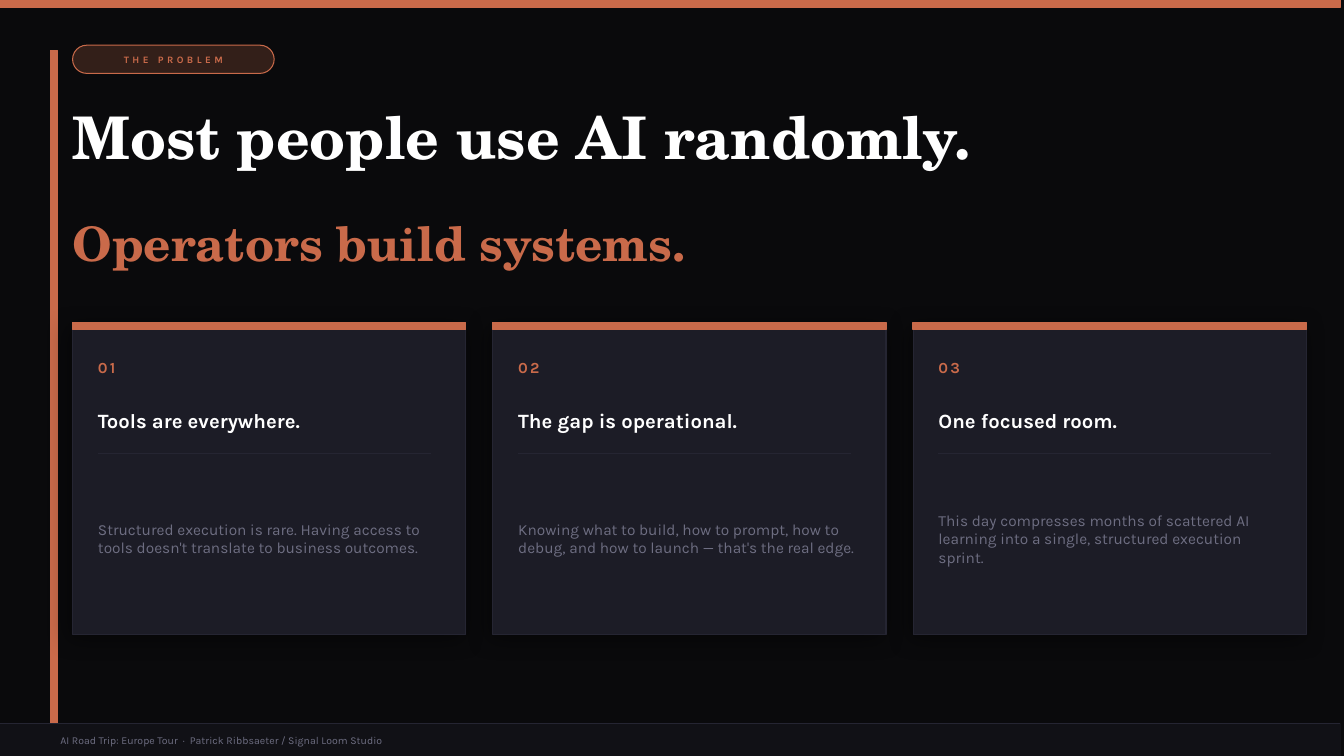
from lxml.etree import SubElement
from pptx import Presentation
from pptx.dml.color import RGBColor
from pptx.enum.shapes import MSO_CONNECTOR, MSO_SHAPE
from pptx.enum.text import MSO_ANCHOR, MSO_AUTO_SIZE, PP_ALIGN
from pptx.oxml import parse_xml
from pptx.oxml.ns import nsdecls, qn
from pptx.util import Cm, Pt

ACCENT, WHITE, GREY = "C96A4A", "FFFFFF", "6E6E82"
BACK, CARD, BAND, RULE = "0A0A0C", "1C1C26", "111116", "252532"
SANS, SERIF = "Karla", "TeX Gyre Schola"
LEFT, BAR, WIDTH = 1.83, 0.18, 33.78
CARD_TOP, CARD_W, CARD_H, CARD_PITCH = 8.13, 9.91, 7.87, 10.59
CARDS = [
    ("Tools are everywhere.",
     "Structured execution is rare. Having access to tools doesn't translate to business outcomes."),
    ("The gap is operational.",
     "Knowing what to build, how to prompt, how to debug, and how to launch — that's the real edge."),
    ("One focused room.",
     "This day compresses months of scattered AI learning into a single, structured execution sprint."),
]


def rgb(color):
    """Turn a hex string into a colour."""
    return RGBColor.from_string(color)


def place(sp, x, y, w, h):
    """Move and size a shape, in centimetres."""
    sp.left, sp.top, sp.width, sp.height = Cm(x), Cm(y), Cm(w), Cm(h)


def add_box(s, x, y, w, h, fill, line=None, weight=1, kind=MSO_SHAPE.RECTANGLE):
    """Add a filled shape without a shadow."""
    sp = s.shapes.add_shape(kind, Cm(x), Cm(y), Cm(w), Cm(h))
    sp.shadow.inherit = False
    sp.fill.solid()
    sp.fill.fore_color.rgb = rgb(fill)
    sp.line.color.rgb = rgb(line or fill)
    sp.line.width = Pt(weight)
    return sp


def add_rule(s, x, y, w, weight):
    """Add a thin horizontal line."""
    line = s.shapes.add_connector(MSO_CONNECTOR.STRAIGHT, Cm(x), Cm(y), Cm(x + w), Cm(y))
    line.line.color.rgb = rgb(RULE)
    line.line.width = Pt(weight)
    SubElement(line._element.spPr, qn("a:effectLst"))


def set_text(sp, text, size, color, font=SANS, bold=False, spacing=0, align=PP_ALIGN.LEFT):
    """Write one formatted paragraph, vertically centred and without insets."""
    tf = sp.text_frame
    tf.word_wrap = True
    tf.auto_size = MSO_AUTO_SIZE.NONE
    tf.vertical_anchor = MSO_ANCHOR.MIDDLE
    tf.margin_left = tf.margin_right = tf.margin_top = tf.margin_bottom = 0
    p = tf.paragraphs[0]
    p.text = text
    p.alignment = align
    p.font.name, p.font.size, p.font.bold = font, Pt(size), bold
    p.font.color.rgb = rgb(color)
    if spacing:
        p._p.pPr.get_or_add_defRPr().set("spc", str(int(spacing * 100)))


def add_text(s, x, y, w, h, text, size, color, **style):
    """Add a text box."""
    sp = s.shapes.add_textbox(Cm(x), Cm(y), Cm(w), Cm(h))
    set_text(sp, text, size, color, **style)


def add_header(s, x, y, w):
    """Add the tag, the title and the second headline."""
    tag = add_box(s, x, y, 5.08, 0.71, ACCENT, weight=0.75, kind=MSO_SHAPE.ROUNDED_RECTANGLE)
    tag.adjustments[0] = 0.5
    tint = tag._element.spPr.find(qn("a:solidFill")).find(qn("a:srgbClr"))
    SubElement(tint, qn("a:alpha")).set("val", "22000")
    set_text(tag, "THE PROBLEM", 7, ACCENT, bold=True, spacing=2.5, align=PP_ALIGN.CENTER)
    place(s.shapes.title, x, y + 1.15, w, 2.29)
    set_text(s.shapes.title, "Most people use AI randomly.", 42, WHITE, font=SERIF, bold=True)
    add_text(s, x, y + 3.99, w, 1.98, "Operators build systems.", 34, ACCENT, font=SERIF, bold=True)


def add_card(s, x, y, w, h, number, heading, body):
    """Add one numbered card with a soft shadow."""
    card = add_box(s, x, y, w, h, CARD, RULE, 0.75)
    card._element.spPr.find(qn("a:effectLst")).append(parse_xml(
        f'<a:outerShdw {nsdecls("a")} blurRad="{Pt(16)}" dist="{Pt(4)}" dir="8100000" '
        'algn="bl" rotWithShape="0"><a:srgbClr val="000000"><a:alpha val="45000"/>'
        '</a:srgbClr></a:outerShdw>'))
    add_box(s, x, y, w, BAR, ACCENT)
    inner, text_w = x + 0.64, w - 1.27
    add_text(s, inner, y + 0.64, 1.78, 0.97, f"{number:02d}", 11, ACCENT, bold=True, spacing=1.5)
    add_text(s, inner, y + 1.83, text_w, 1.27, heading, 14.5, WHITE, bold=True)
    add_rule(s, inner, y + 3.3, w - 1.53, 0.75)
    add_text(s, inner, y + 3.66, text_w, 3.56, body, 11, GREY)


def add_footer(s, x, y, w, h):
    """Add the footer band."""
    add_box(s, x, y, w, h, BAND)
    add_rule(s, x, y, w, 0.5)
    add_text(s, x + 1.52, y, w - 3.05, h,
             "AI Road Trip: Europe Tour  ·  Patrick Ribbsaeter / Signal Loom Studio", 7.5, GREY)


def main():
    """Build the slide and save it."""
    prs = Presentation()
    prs.slide_width, prs.slide_height = Cm(33.87), Cm(19.05)
    s = prs.slides.add_slide(prs.slide_layouts[5])
    s.background.fill.solid()
    s.background.fill.fore_color.rgb = rgb(BACK)
    add_box(s, 0, 0, WIDTH, BAR, ACCENT)
    add_box(s, 1.27, 1.27, BAR, 16.97, ACCENT)
    add_header(s, LEFT, 1.14, 27.94)
    for i, (heading, body) in enumerate(CARDS):
        add_card(s, LEFT + i * CARD_PITCH, CARD_TOP, CARD_W, CARD_H, i + 1, heading, body)
    add_footer(s, 0, 18.24, WIDTH, 0.81)
    prs.save("out.pptx")


if __name__ == "__main__":
    main()
